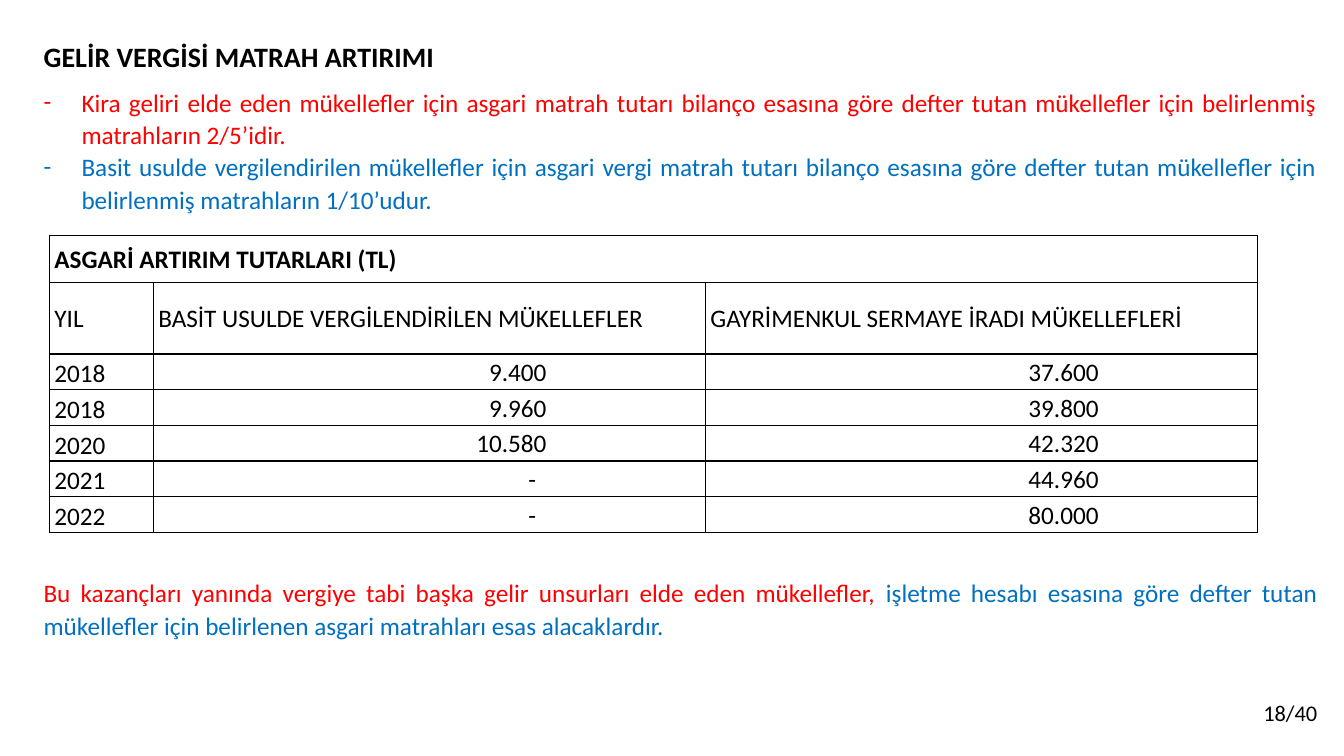
import pptx
import pptx.dml.color
import pptx.enum.text
import pptx.oxml
import pptx.oxml.ns
import pptx.util

Pt = pptx.util.Pt
RGBColor = pptx.dml.color.RGBColor
ALIGN = pptx.enum.text.PP_ALIGN
ANCHOR = pptx.enum.text.MSO_ANCHOR

BLACK = RGBColor(0x00, 0x00, 0x00)
RED = RGBColor(0xFF, 0x00, 0x00)
BLUE = RGBColor(0x00, 0x70, 0xC0)

LEFT, WIDTH = 24, 924
NUMBER_INSET, DASH_INSET = 113.5, 121

BULLETS = [
    ("Kira geliri elde eden mükellefler için asgari matrah tutarı bilanço esasına göre "
     "defter tutan mükellefler için belirlenmiş matrahların 2/5’idir.", RED),
    ("Basit usulde vergilendirilen mükellefler için asgari vergi matrah tutarı bilanço esasına göre "
     "defter tutan mükellefler için belirlenmiş matrahların 1/10’udur.", BLUE),
]
NOTE = [
    ("Bu kazançları yanında vergiye tabi başka gelir unsurları elde eden mükellefler, ", RED),
    ("işletme hesabı esasına göre defter tutan mükellefler için belirlenen asgari matrahları "
     "esas alacaklardır.", BLUE),
]
TABLE_TITLE = "ASGARİ ARTIRIM TUTARLARI (TL)"
HEADERS = ["YIL", "BASİT USULDE VERGİLENDİRİLEN MÜKELLEFLER",
           "GAYRİMENKUL SERMAYE İRADI MÜKELLEFLERİ"]
AMOUNTS = [
    ["2018", "9.400", "37.600"],
    ["2018", "9.960", "39.800"],
    ["2020", "10.580", "42.320"],
    ["2021", "-", "44.960"],
    ["2022", "-", "80.000"],
]


def add_xml(parent, xml, index=None):
    ns = pptx.oxml.ns.nsdecls("a")
    el = pptx.oxml.parse_xml(xml.replace(" ", f" {ns} ", 1))
    parent.insert(len(parent) if index is None else index, el)


class SlideBuilder:
    def __init__(self, slide, font="Calibri", size=18):
        self.slide = slide
        self.font = font
        self.size = size

    def style(self, p, color=BLACK, size=None, bold=False, align=ALIGN.JUSTIFY):
        p.alignment = align
        p.line_spacing = 1.07
        p.space_before = Pt(0)
        p.space_after = Pt(0)
        p.font.name = self.font
        p.font.size = Pt(size or self.size)
        p.font.bold = bold
        p.font.color.rgb = color

    def frame(self, sp, top, height):
        sp.left, sp.top, sp.width, sp.height = Pt(LEFT), Pt(top), Pt(WIDTH), Pt(height)
        tf = sp.text_frame
        tf.word_wrap = True
        tf.auto_size = pptx.enum.text.MSO_AUTO_SIZE.NONE
        tf.vertical_anchor = ANCHOR.TOP
        return tf

    def title(self, text, top, height):
        tf = self.frame(self.slide.shapes.title, top, height)
        tf.text = text
        self.style(tf.paragraphs[0], size=20, bold=True)

    def bullets(self, items, top, height):
        tf = self.frame(self.slide.placeholders[1], top, height)
        for i, (text, color) in enumerate(items):
            p = tf.paragraphs[0] if i == 0 else tf.add_paragraph()
            p.text = text
            self.style(p, color)
            pPr = p._p.get_or_add_pPr()
            pPr.set("marL", str(Pt(27)))
            pPr.set("indent", str(-Pt(27)))
            for j, xml in enumerate([
                f'<a:buClr ><a:srgbClr val="{color}"/></a:buClr>',
                f'<a:buFont typeface="{self.font}"/>',
                '<a:buChar char="-"/>',
            ]):
                add_xml(pPr, xml, 3 + j)

    def text(self, runs, top, height, **style):
        sp = self.slide.shapes.add_textbox(0, 0, 0, 0)
        p = self.frame(sp, top, height).paragraphs[0]
        self.style(p, **style)
        for text, color in runs:
            r = p.add_run()
            r.text = text
            r.font.color.rgb = color

    def cell(self, cell, text, bold=False, align=ALIGN.JUSTIFY, anchor=ANCHOR.MIDDLE, inset=3.6):
        cell.margin_left, cell.margin_right = Pt(3.6), Pt(inset)
        cell.margin_top = cell.margin_bottom = 0
        cell.vertical_anchor = anchor
        cell.text = text
        self.style(cell.text_frame.paragraphs[0], bold=bold, align=align)
        cell.fill.background()
        tcPr = cell._tc.get_or_add_tcPr()
        for i, side in enumerate("LRTB"):
            add_xml(tcPr, f'<a:ln{side} w="{Pt(1)}"><a:solidFill>'
                          f'<a:srgbClr val="{BLACK}"/></a:solidFill></a:ln{side}>', i)

    def table(self, title, headers, rows, left, top, widths, heights):
        tbl = self.slide.shapes.add_table(len(heights), len(widths), Pt(left), Pt(top),
                                          Pt(sum(widths)), Pt(sum(heights))).table
        tbl.first_row = tbl.horz_banding = False
        for col, width in zip(tbl.columns, widths):
            col.width = Pt(width)
        for row, height in zip(tbl.rows, heights):
            row.height = Pt(height)
        for c, header in enumerate(headers):
            self.cell(tbl.cell(0, c), "" if c else title, bold=True)
            self.cell(tbl.cell(1, c), header)
        tbl.cell(0, 0).merge(tbl.cell(0, len(widths) - 1))
        for r, (year, *amounts) in enumerate(rows, 2):
            self.cell(tbl.cell(r, 0), year, anchor=ANCHOR.BOTTOM)
            for c, amount in enumerate(amounts, 1):
                inset = DASH_INSET if amount == "-" else NUMBER_INSET
                self.cell(tbl.cell(r, c), amount, align=ALIGN.RIGHT, inset=inset)


def main():
    prs = pptx.Presentation()
    prs.slide_width, prs.slide_height = Pt(960), Pt(540)
    s = SlideBuilder(prs.slides.add_slide(prs.slide_layouts[1]))
    s.title("GELİR VERGİSİ MATRAH ARTIRIMI", 23, 34)
    s.bullets(BULLETS, 57, 102)
    s.table(TABLE_TITLE, HEADERS, AMOUNTS, 35.3, 168,
            [74.2, 394.4, 394.4], [33.6, 51.2] + [25.5] * len(AMOUNTS))
    s.text(NOTE, 407.5, 55)
    s.text([("18/40", BLACK)], 494.5, 29, size=16, align=ALIGN.RIGHT)
    prs.save("out.pptx")


if __name__ == "__main__":
    main()
